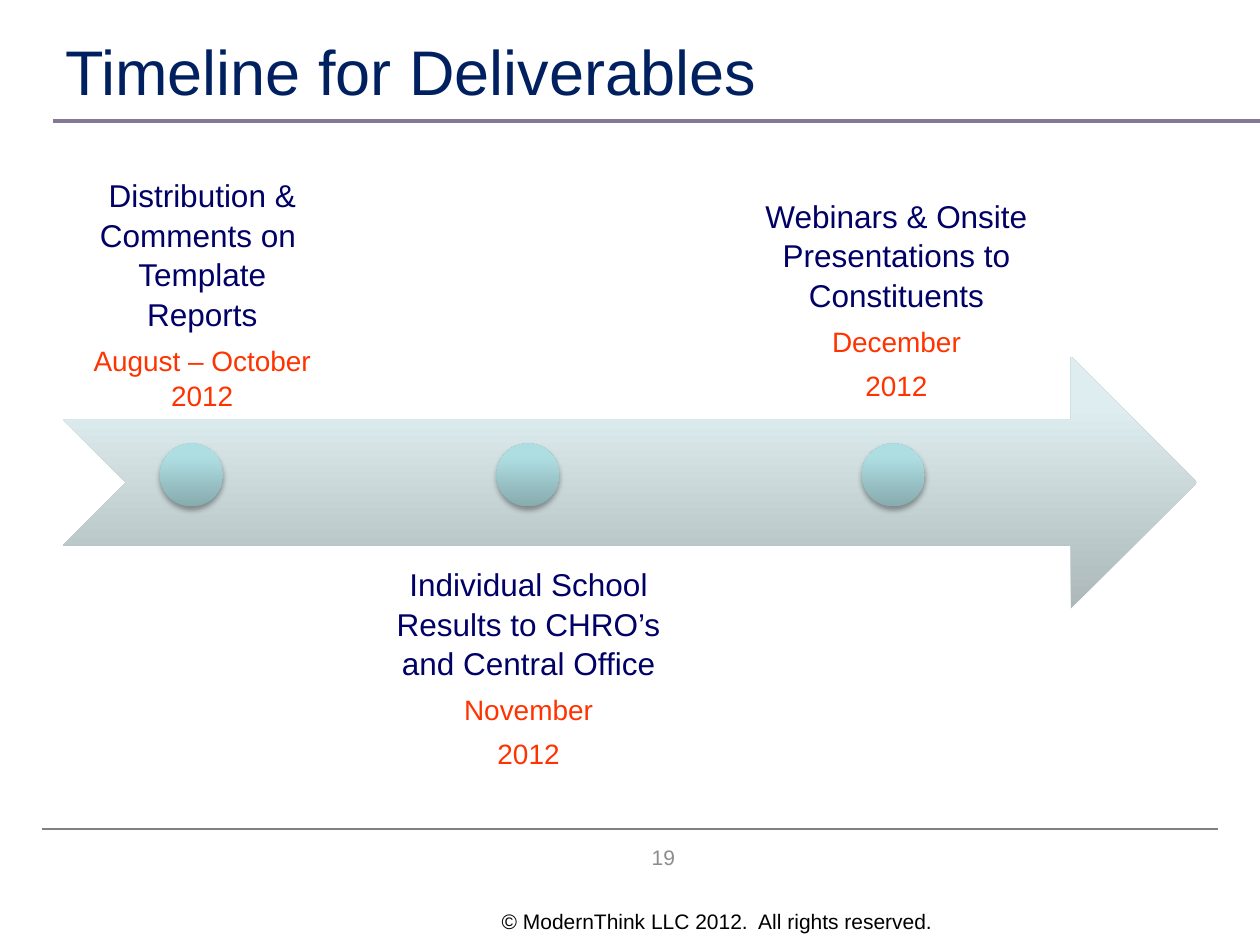
from pptx import Presentation
from pptx import util as u
from pptx.dml.color import RGBColor
from pptx.enum import shapes, text
from pptx.oxml import parse_xml
from pptx.oxml.ns import nsdecls

COLUMNS, ROWS = 100, 75
NAVY, ORANGE = "000066", "FF3300"
ARROW_STOPS = ((0, "ABB7B8"), (80, "DEEDEF"), (100, "DFEFF0"))
DOT_STOPS = ((0, "87ABAE"), (80, "AFDEE2"), (100, "AFE0E4"))
CENTER = text.PP_ALIGN.CENTER
TOP, MIDDLE, BOTTOM = (text.MSO_ANCHOR.TOP, text.MSO_ANCHOR.MIDDLE,
                       text.MSO_ANCHOR.BOTTOM)

deck = Presentation()
deck.slide_width, deck.slide_height = u.Inches(10), u.Inches(7.5)
slide = deck.slides.add_slide(deck.slide_layouts[6])


def color(value):
    return RGBColor.from_string(value)


def grid(column, row, *span):
    across, down = deck.slide_width / COLUMNS, deck.slide_height / ROWS
    steps = (across, down, across, down)
    return [round(n * step) for n, step in zip((column, row, *span), steps)]


def write(box, lines, size=18, ink="000000", align=text.PP_ALIGN.LEFT,
          anchor=TOP, inset=None, after=0, spacing=None):
    label = slide.shapes.add_textbox(*grid(*box)).text_frame
    label.word_wrap = True
    label.vertical_anchor = anchor
    if inset is not None:
        label.margin_left = label.margin_right = u.Inches(inset)
        label.margin_top = label.margin_bottom = u.Inches(inset)
    for index, line in enumerate(lines):
        words, line_size, line_ink = line if isinstance(line, tuple) else (line, size, ink)
        paragraph = label.paragraphs[0] if index == 0 else label.add_paragraph()
        paragraph.alignment = align
        paragraph.space_after = u.Pt(after)
        paragraph.line_spacing = spacing
        run = paragraph.add_run()
        run.text = words
        run.font.name = "Arial"
        run.font.size = u.Pt(line_size)
        run.font.color.rgb = color(line_ink)


def rule(start, end, ink, weight):
    line = slide.shapes.add_connector(
        shapes.MSO_CONNECTOR.STRAIGHT, *grid(*start), *grid(*end))
    line.line.color.rgb = color(ink)
    line.line.width = u.Pt(weight)
    line._element.spPr.append(parse_xml(f"<a:effectLst {nsdecls('a')}/>"))


def gradient_shape(preset, box, stops):
    figure = slide.shapes.add_shape(preset, *grid(*box))
    figure.shadow.inherit = False
    figure.line.fill.background()
    figure.fill.gradient()
    figure.fill.gradient_angle = 90
    stop_list = figure._element.spPr.gradFill.gsLst
    for old in list(stop_list):
        stop_list.remove(old)
    for share, ink in stops:
        stop_list.append(parse_xml(
            f'<a:gs {nsdecls("a")} pos="{share * 1000}"><a:srgbClr val="{ink}"/></a:gs>'))
    return figure


def header(column, row, width, height):
    write((column, row, width, height), ["Timeline for Deliverables"],
          size=36, ink="002060", anchor=MIDDLE)
    baseline = row + height + 0.5
    rule((column, baseline), (COLUMNS, baseline), "837898", 2.25)


def footer(column, row, width):
    rule((column, row), (column + width, row), "808080", 0.75)
    write((41, row + 0.2, 23.3, 4), ["19"], size=12, ink="8C8C8C",
          align=CENTER, anchor=MIDDLE)
    write((34.2, row + 5.8, 40.8, 3),
          ["© ModernThink LLC 2012.  All rights reserved."],
          size=12, align=text.PP_ALIGN.RIGHT)


def milestone(box, dot_column, dot_row, task, dates, anchor):
    write(box, [(task, 18, NAVY)] + [(date, 16, ORANGE) for date in dates],
          align=CENTER, anchor=anchor, inset=0.14, after=5, spacing=1.05)
    dot = gradient_shape(shapes.MSO_SHAPE.OVAL, (dot_column, dot_row, 5, 5), DOT_STOPS)
    dot._element.spPr.effectLst.append(parse_xml(
        f'<a:outerShdw {nsdecls("a")} blurRad="{u.Pt(3.1)}" dist="{u.Pt(1.8)}" '
        'dir="5400000" rotWithShape="0"><a:srgbClr val="000000">'
        '<a:alpha val="35000"/></a:srgbClr></a:outerShdw>'))


def timeline(column, row, width, height):
    gradient_shape(shapes.MSO_SHAPE.NOTCHED_RIGHT_ARROW,
                   (column, row, width, height), ARROW_STOPS)
    middle = row + height / 2
    milestones = (
        ((column, 14.1, 22.1, 20), 12.7,
         "Distribution & Comments on  Template Reports",
         ["August – October 2012"], BOTTOM),
        ((28.3, middle + 5, 27.3, 20), 39.4,
         "Individual School Results to CHRO’s and Central Office",
         ["November", "2012"], TOP),
        ((56.3, 13.3, 29.7, 20), 68.4,
         "Webinars & Onsite Presentations to Constituents",
         ["December", "2012"], BOTTOM),
    )
    for box, dot_column, task, dates, anchor in milestones:
        milestone(box, dot_column, middle - 3.1, task, dates, anchor)


header(4.2, 2, 70.8, 7.1)
footer(3.3, 65.8, 93.4)
timeline(5, 28.3, 90, 20)
deck.save("out.pptx")
